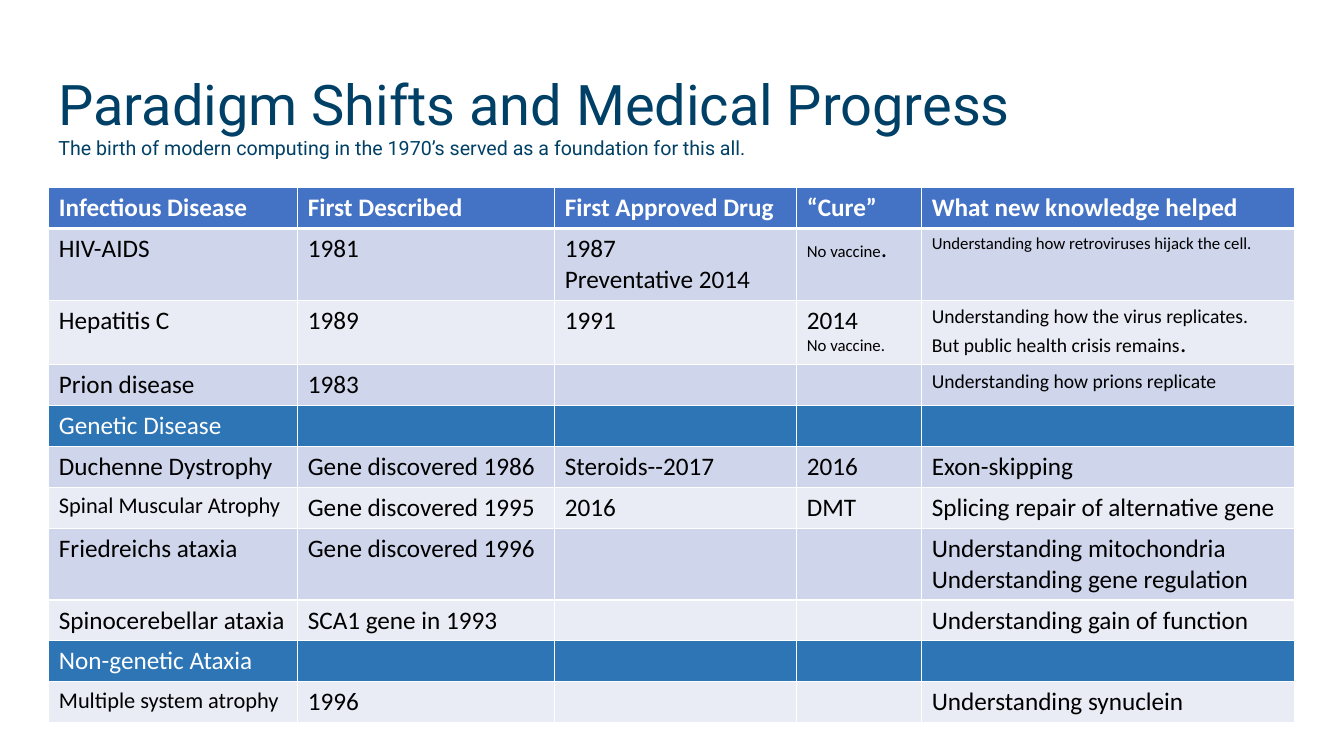
from copy import deepcopy
from dataclasses import dataclass

from lxml.etree import SubElement
from pptx import Presentation
from pptx.dml.color import RGBColor
from pptx.enum.text import MSO_ANCHOR, MSO_AUTO_SIZE, PP_ALIGN
from pptx.oxml.ns import qn
from pptx.util import Pt

COLORS = {
    "title": "004066",
    "header": "4472C4",
    "section": "2E75B6",
    "dark_band": "CFD5EA",
    "light_band": "E9EBF5",
    "white": "FFFFFF",
    "black": "000000",
}
COLUMN_WIDTHS = (177.84, 183.6, 172.8, 89.28, 266.4)
ROW_HEIGHT = 29.2
BODY_SIZE = 18


@dataclass(frozen=True)
class Span:
    text: str
    size: float = BODY_SIZE
    new_paragraph: bool = False


@dataclass(frozen=True)
class TableRow:
    cells: tuple
    kind: str = "body"


ROWS = (
    TableRow(("Infectious Disease", "First Described", "First Approved Drug", "“Cure”",
              "What new knowledge helped"), "header"),
    TableRow(("HIV-AIDS", "1981",
              (Span("1987"), Span("Preventative 2014", new_paragraph=True)),
              (Span("No vaccine", 12), Span(".")),
              (Span("Understanding how retroviruses hijack the cell.", 12),))),
    TableRow(("Hepatitis C", "1989", "1991",
              (Span("2014"), Span("No vaccine.", 12, True)),
              (Span("Understanding how the virus replicates.", 14),
               Span("But public health crisis remains", 14, True), Span(".")))),
    TableRow(("Prion disease", "1983", "", "",
              (Span("Understanding how prions replicate", 14),))),
    TableRow(("Genetic Disease", "", "", "", ""), "section"),
    TableRow(("Duchenne Dystrophy", "Gene discovered 1986", "Steroids--2017", "2016",
              "Exon-skipping")),
    TableRow(((Span("Spinal Muscular Atrophy", 16),), "Gene discovered 1995", "2016", "DMT",
              "Splicing repair of alternative gene")),
    TableRow(("Friedreichs ataxia", "Gene discovered 1996", "", "",
              (Span("Understanding mitochondria"),
               Span("Understanding gene regulation", new_paragraph=True)))),
    TableRow(("Spinocerebellar ataxia", "SCA1 gene in 1993", "", "",
              "Understanding gain of function")),
    TableRow(("Non-genetic Ataxia", "", "", "", ""), "section"),
    TableRow(((Span("Multiple system atrophy", 16),), "1996", "", "",
              "Understanding synuclein")),
)


def color(name: str) -> RGBColor:
    return RGBColor.from_string(COLORS[name])


def add_text(paragraph, text: str, *, size: float, font: str = "Calibri",
             color_name: str = "black", bold: bool = False):
    run = paragraph.add_run()
    run.text = text
    run.font.size = Pt(size)
    run.font.name = font
    run.font.bold = bold
    run.font.color.rgb = color(color_name)
    return run


def add_title(slide) -> None:
    title = slide.shapes.title
    title.left, title.top, title.width, title.height = Pt(34.56), Pt(59.76), Pt(725.76), Pt(49.68)
    frame = title.text_frame
    frame.word_wrap = True
    frame.auto_size = MSO_AUTO_SIZE.NONE
    frame.vertical_anchor = MSO_ANCHOR.MIDDLE
    paragraph = frame.paragraphs[0]
    paragraph.alignment = PP_ALIGN.LEFT
    paragraph.line_spacing = 0.9
    heading = add_text(paragraph, "Paradigm Shifts and Medical Progress",
                       size=40, font="Roboto", color_name="title")
    paragraph.add_line_break()
    paragraph._p[-1].append(deepcopy(heading._r[0]))
    add_text(paragraph, "The birth of modern computing in the 1970’s served as a foundation for this all.",
             size=14, font="Roboto", color_name="title")


def set_borders(cell, top: float, bottom: float) -> None:
    properties = cell._tc.get_or_add_tcPr()
    for side, width in (("L", 1), ("R", 1), ("T", top), ("B", bottom)):
        line = SubElement(properties, qn(f"a:ln{side}"), w=str(Pt(width)))
        fill = SubElement(line, qn("a:solidFill"))
        SubElement(fill, qn("a:srgbClr"), val=COLORS["white"])


def fill_cell(cell, content, kind: str, fill_name: str) -> None:
    cell.fill.solid()
    cell.fill.fore_color.rgb = color(fill_name)
    spans = (Span(content),) if isinstance(content, str) else content
    paragraph = cell.text_frame.paragraphs[0]
    for span in spans:
        if span.new_paragraph:
            paragraph = cell.text_frame.add_paragraph()
        if span.text:
            add_text(paragraph, span.text, size=span.size, bold=kind == "header",
                     color_name="black" if kind == "body" else "white")
        else:
            paragraph.font.size = Pt(span.size)


def add_disease_table(slide) -> None:
    frame = slide.shapes.add_table(len(ROWS), len(COLUMN_WIDTHS), Pt(34.9), Pt(134),
                                   Pt(sum(COLUMN_WIDTHS)), Pt(ROW_HEIGHT * len(ROWS)))
    table = frame.table
    table.horz_banding = False
    for column, width in zip(table.columns, COLUMN_WIDTHS):
        column.width = Pt(width)
    for row_index, row in enumerate(ROWS):
        table.rows[row_index].height = Pt(ROW_HEIGHT)
        band = "dark_band" if row_index % 2 else "light_band"
        fill_name = band if row.kind == "body" else row.kind
        for column_index, content in enumerate(row.cells):
            cell = table.cell(row_index, column_index)
            set_borders(cell, top=3 if row_index == 1 else 1, bottom=3 if row_index == 0 else 1)
            fill_cell(cell, content, row.kind, fill_name)


def main() -> None:
    presentation = Presentation()
    presentation.slide_width, presentation.slide_height = Pt(960), Pt(540)
    slide = presentation.slides.add_slide(presentation.slide_layouts[5])
    add_title(slide)
    add_disease_table(slide)
    presentation.save("out.pptx")


if __name__ == "__main__":
    main()
